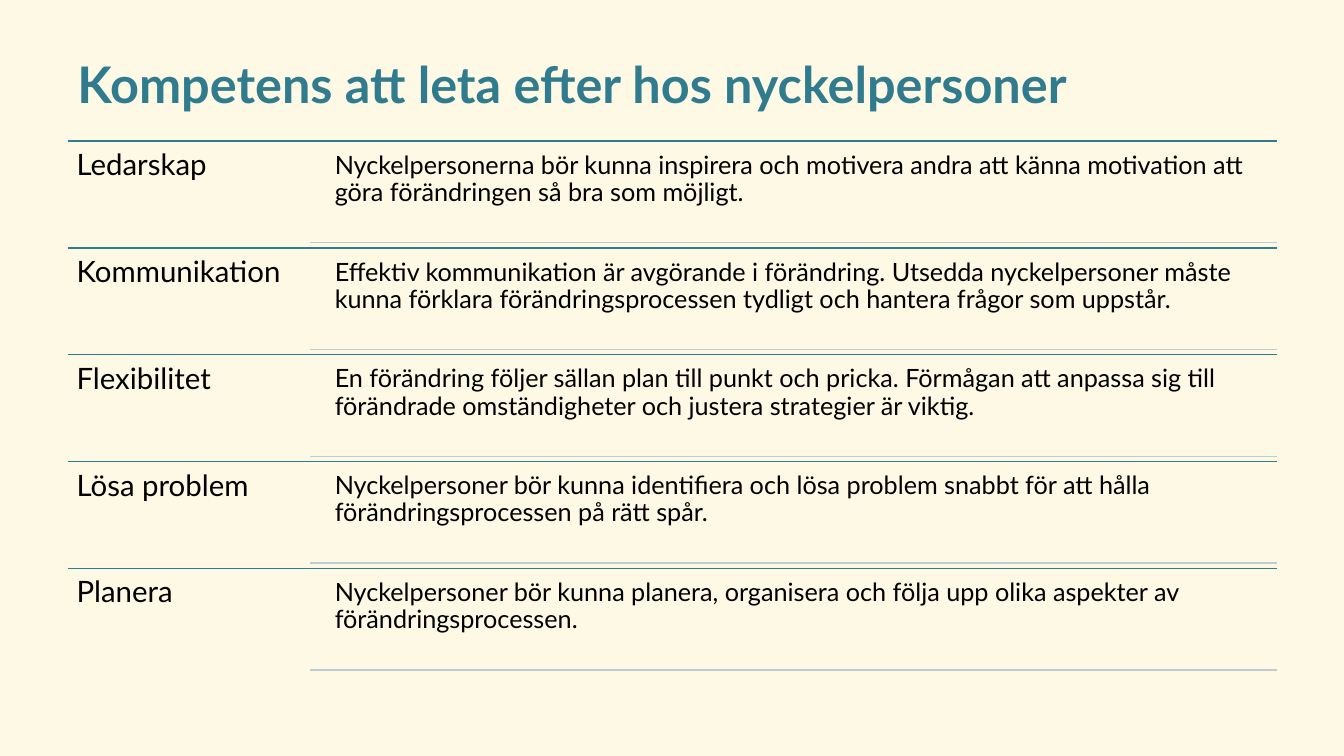
from dataclasses import dataclass

from lxml.etree import SubElement
from pptx import Presentation
from pptx.dml.color import RGBColor
from pptx.enum.shapes import MSO_CONNECTOR as Connector
from pptx.enum.text import MSO_ANCHOR as Anchor, PP_ALIGN as Align
from pptx.oxml.ns import qn
from pptx.slide import Slide
from pptx.util import Inches, Pt

SLIDE_WIDTH, SLIDE_HEIGHT = 13.33, 7.5
GRID_LEFT, GRID_TOP = 0.67, 1.4
COLUMN, ROW = 1.0, 1.06
COLUMNS = 12
COLORS = {"cream": "FDF9E4", "teal": "307C8E", "mist": "BECCD1", "ink": "000000"}


@dataclass(frozen=True)
class TextStyle:
    size: int
    color: str
    spacing: float
    inset_x: float
    inset_y: float
    bold: bool = False
    anchor: Anchor = Anchor.TOP


@dataclass(frozen=True)
class Competence:
    name: str
    description: str


TITLE = TextStyle(36, "teal", 1.1, 0.1, 0.05, True, Anchor.MIDDLE)
NAME = TextStyle(21, "ink", 0.9, 0.09, 0.09)
DESCRIPTION = TextStyle(18, "ink", 0.9, 0.07, 0.07)

COMPETENCES = [
    Competence(
        "Ledarskap",
        "Nyckelpersonerna bör kunna inspirera och motivera andra att känna "
        "motivation att göra förändringen så bra som möjligt.",
    ),
    Competence(
        "Kommunikation",
        "Effektiv kommunikation är avgörande i förändring. Utsedda nyckelpersoner måste "
        "kunna förklara förändringsprocessen tydligt och hantera frågor som uppstår.",
    ),
    Competence(
        "Flexibilitet",
        "En förändring följer sällan plan till punkt och pricka. Förmågan att anpassa sig "
        "till förändrade omständigheter och justera strategier är viktig.",
    ),
    Competence(
        "Lösa problem",
        "Nyckelpersoner bör kunna identifiera och lösa problem snabbt för att hålla "
        "förändringsprocessen på rätt spår.",
    ),
    Competence(
        "Planera",
        "Nyckelpersoner bör kunna planera, organisera och följa upp olika aspekter av "
        "förändringsprocessen.",
    ),
]


def color_of(name: str) -> RGBColor:
    return RGBColor.from_string(COLORS[name])


def grid_x(column: float) -> int:
    return Inches(GRID_LEFT + column * COLUMN)


def grid_y(row: float) -> int:
    return Inches(GRID_TOP + row * ROW)


def add_text(page: Slide, text: str, column: float, row: float,
             columns: float, rows: float, style: TextStyle) -> None:
    box = page.shapes.add_textbox(
        grid_x(column), grid_y(row), Inches(columns * COLUMN), Inches(rows * ROW))
    frame = box.text_frame
    frame_format = {
        "word_wrap": True,
        "vertical_anchor": style.anchor,
        "margin_left": Inches(style.inset_x),
        "margin_right": Inches(style.inset_x),
        "margin_top": Inches(style.inset_y),
        "margin_bottom": Inches(style.inset_y),
    }
    para = frame.paragraphs[0]
    span = para.add_run()
    span.text = text
    para_format = {"alignment": Align.LEFT, "line_spacing": style.spacing}
    font_format = {"name": "Lato", "size": Pt(style.size), "bold": style.bold}
    for target, values in ((frame, frame_format), (para, para_format), (span.font, font_format)):
        for name, value in values.items():
            setattr(target, name, value)
    span.font.color.rgb = color_of(style.color)


def add_rule(page: Slide, column: float, row: float, color: str) -> None:
    rule = page.shapes.add_connector(
        Connector.STRAIGHT, grid_x(column), grid_y(row), grid_x(COLUMNS), grid_y(row))
    rule.line.color.rgb = color_of(color)
    rule.line.width = Pt(1)
    SubElement(rule.element.spPr, qn("a:effectLst"))


def add_competence(page: Slide, row: int, competence: Competence) -> None:
    add_rule(page, 0, row, "teal")
    add_text(page, competence.name, 0, row, 2.4, 1, NAME)
    add_text(page, competence.description, 2.58, row + 0.04, 9.42, 0.91, DESCRIPTION)
    add_rule(page, 2.4, row + 0.95, "mist")


def main() -> None:
    deck = Presentation()
    deck.slide_width, deck.slide_height = Inches(SLIDE_WIDTH), Inches(SLIDE_HEIGHT)
    page = deck.slides.add_slide(deck.slide_layouts[6])
    page.background.fill.solid()
    page.background.fill.fore_color.rgb = color_of("cream")
    add_text(page, "Kompetens att leta efter hos nyckelpersoner",
             0, -0.95, COLUMNS, 0.77, TITLE)
    for row, competence in enumerate(COMPETENCES):
        add_competence(page, row, competence)
    deck.save("out.pptx")


if __name__ == "__main__":
    main()
